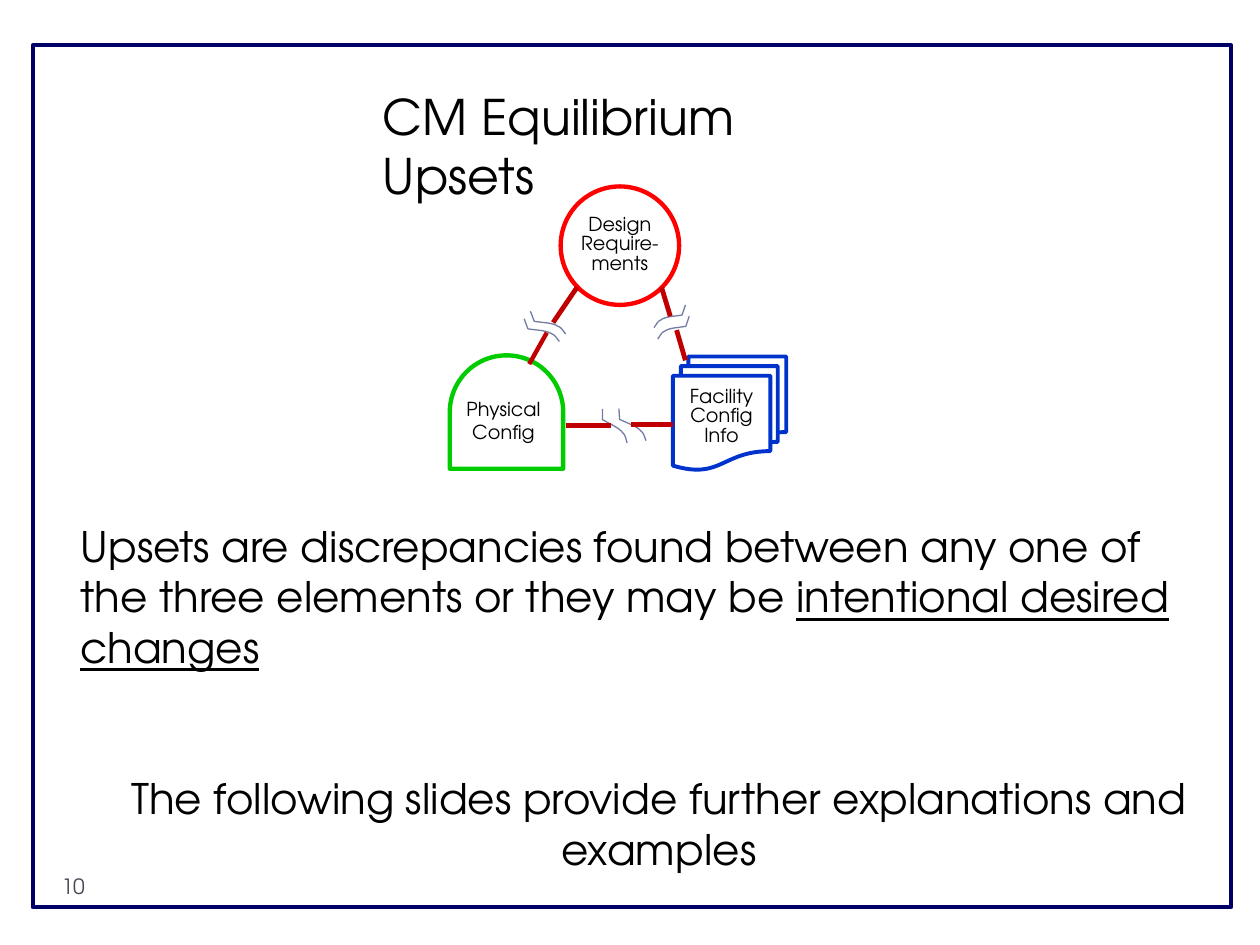
import dataclasses

import pptx
import pptx.dml.color
import pptx.enum.shapes
import pptx.enum.text
import pptx.oxml
import pptx.oxml.ns
import pptx.util

Inches = pptx.util.Inches
Pt = pptx.util.Pt
Kind = pptx.enum.shapes.MSO_SHAPE
Align = pptx.enum.text.PP_ALIGN


@dataclasses.dataclass(frozen=True)
class Theme:
    font: str = "TeX Gyre Adventor"
    title: int = 28
    body: int = 24
    number: int = 12
    label: int = 11
    ink: str = "000000"
    grey: str = "464653"
    white: str = "FFFFFF"
    frame: str = "000066"
    design: str = "FF0000"
    info: str = "0033CC"
    physical: str = "00CC00"
    link: str = "C00000"
    mark: str = "727CA3"


def color(value):
    return pptx.dml.color.RGBColor.from_string(value)


def bezier(p0, p1, p2, p3, steps=8):
    """Points along a cubic curve, without its start."""
    for step in range(1, steps + 1):
        t = step / steps
        weights = ((1 - t) ** 3, 3 * t * (1 - t) ** 2, 3 * t * t * (1 - t), t ** 3)
        yield tuple(sum(w * p[axis] for w, p in zip(weights, (p0, p1, p2, p3)))
                    for axis in (0, 1))


class SlideBuilder:
    MARK_WIDTH, MARK_HEIGHT = 0.28, 0.18

    def __init__(self, page, theme):
        self.page = page
        self.theme = theme

    def style_spans(self, para, size, ink):
        for span in para.runs:
            span.font.name = self.theme.font
            span.font.size = Pt(size)
            span.font.color.rgb = color(ink)

    def set_insets(self, frame, insets):
        (frame.margin_left, frame.margin_top,
         frame.margin_right, frame.margin_bottom) = map(Inches, insets)

    def outline(self, shape, ink, width):
        shape.shadow.inherit = False
        shape.line.color.rgb = color(ink)
        shape.line.width = Pt(width)

    def text(self, left, top, width, height, words, size, ink=None):
        box = self.page.shapes.add_textbox(*map(Inches, (left, top, width, height)))
        frame = box.text_frame
        frame.word_wrap = True
        frame.text = words
        self.style_spans(frame.paragraphs[0], size, ink or self.theme.ink)
        return frame

    def shape(self, kind, left, top, width, height, ink, width_pt, fill=None):
        shape = self.page.shapes.add_shape(
            kind, *map(Inches, (left, top, width, height)))
        self.outline(shape, ink, width_pt)
        if fill:
            shape.fill.solid()
            shape.fill.fore_color.rgb = color(fill)
        else:
            shape.fill.background()
        return shape

    def label(self, shape, words, insets, leading=None, after=None):
        frame = shape.text_frame
        frame.word_wrap = True
        frame.vertical_anchor = pptx.enum.text.MSO_ANCHOR.TOP
        self.set_insets(frame, insets)
        para = frame.paragraphs[0]
        para.text = words
        para.alignment = Align.CENTER
        if leading:
            para.line_spacing = Pt(leading)
        if after:
            para.space_after = Pt(after)
        self.style_spans(para, self.theme.label, self.theme.ink)

    def link(self, x1, y1, x2, y2, width=2.75):
        line = self.page.shapes.add_connector(
            pptx.enum.shapes.MSO_CONNECTOR.STRAIGHT, *map(Inches, (x1, y1, x2, y2)))
        line.line.color.rgb = color(self.theme.link)
        line.line.width = Pt(width)
        line.element.spPr.append(pptx.oxml.parse_xml(
            f"<a:effectLst {pptx.oxml.ns.nsdecls('a')}/>"))

    def break_mark(self, left, top, rotation=0, width=MARK_WIDTH, mirrored=False):
        start, middle, end = (0.28, 0.18), (0.22, 0.12), (0.03, 0.08)
        points = [start,
                  *bezier(start, (0.26, 0.16), (0.25, 0.13), middle),
                  *bezier(middle, (0.18, 0.09), (0.08, 0.09), end),
                  (0, 0)]
        scale = width / self.MARK_WIDTH
        points = [(Inches(left + (width - x * scale if mirrored else x * scale)),
                   Inches(top + y)) for x, y in points]
        builder = self.page.shapes.build_freeform(*points[0])
        builder.add_line_segments(points[1:], close=False)
        mark = builder.convert_to_shape()
        mark.fill.background()
        self.outline(mark, self.theme.mark, 0.75)
        mark.rotation = rotation


def main():
    deck = pptx.Presentation()
    deck.slide_width, deck.slide_height = Inches(10), Inches(7.5)
    theme = Theme()
    slide = SlideBuilder(deck.slides.add_slide(deck.slide_layouts[6]), theme)

    # Title
    title = slide.text(2.94, 0.64, 4.2, 0.57, "CM Equilibrium Upsets", theme.title)
    title.margin_right = Inches(0.2)

    # Body
    body = slide.text(
        0.54, 4.08, 9, 2.93,
        "Upsets are discrepancies found between any one of the three elements "
        "or they may be ", theme.body)
    first = body.paragraphs[0]
    changes = first.add_run()
    changes.text = "intentional desired changes"
    changes.font.underline = True
    slide.style_spans(first, theme.body, theme.ink)
    closing = body.add_paragraph()
    closing.text = "The following slides provide further explanations and examples"
    closing.alignment = Align.CENTER
    closing.space_before = Pt(58)
    properties = closing._p.get_or_add_pPr()
    properties.set("marL", str(Inches(0.38)))
    properties.set("indent", "0")
    slide.style_spans(closing, theme.body, theme.ink)

    # Frame
    slide.shape(Kind.RECTANGLE, 0.26, 0.36, 9.51, 6.84, theme.frame, 2.5)

    # Three elements
    design = slide.shape(Kind.OVAL, 4.45, 1.48, 0.94, 0.94,
                         theme.design, 2.5, theme.white)
    slide.label(design, "Design\nRequire-ments", (0, 0.1, 0, 0), leading=11)
    info = slide.shape(Kind.FLOWCHART_MULTIDOCUMENT, 5.34, 2.83, 0.9, 0.9,
                       theme.info, 2.25, theme.white)
    slide.label(info, "Facility\nConfig\nInfo", (0, 0.1, 0, 0), leading=11, after=6)
    physical = slide.shape(Kind.FLOWCHART_DELAY, 3.57, 2.82, 0.9, 0.9,
                           theme.physical, 2.5, theme.white)
    physical.rotation = 270
    slide.label(physical, "Physical\nConfig", (0.1, 0, 0.2, 0), after=6)
    physical.element.txBody.bodyPr.set("vert", "eaVert")

    # Broken links
    for left, top, rotation in ((4.16, 2.53, 0), (4.21, 2.47, 0),
                                (4.88, 3.28, 16.9), (4.74, 3.29, 21.3)):
        slide.break_mark(left, top, rotation)
    for left, top in ((5.19, 2.42), (5.22, 2.51)):
        slide.break_mark(left, top, width=0.25, mirrored=True)
    slide.link(4.58, 2.28, 4.39, 2.56)
    slide.link(4.34, 2.64, 4.2, 2.89, width=2.5)
    slide.link(5.25, 2.28, 5.32, 2.51)
    slide.link(5.37, 2.62, 5.44, 2.86)
    slide.link(4.85, 3.38, 4.49, 3.38)
    slide.link(5.34, 3.37, 5.01, 3.37)

    # Page number
    slide.text(0.39, 6.88, 0.46, 0.4, "10", theme.number, theme.grey)

    deck.save("out.pptx")


if __name__ == "__main__":
    main()
